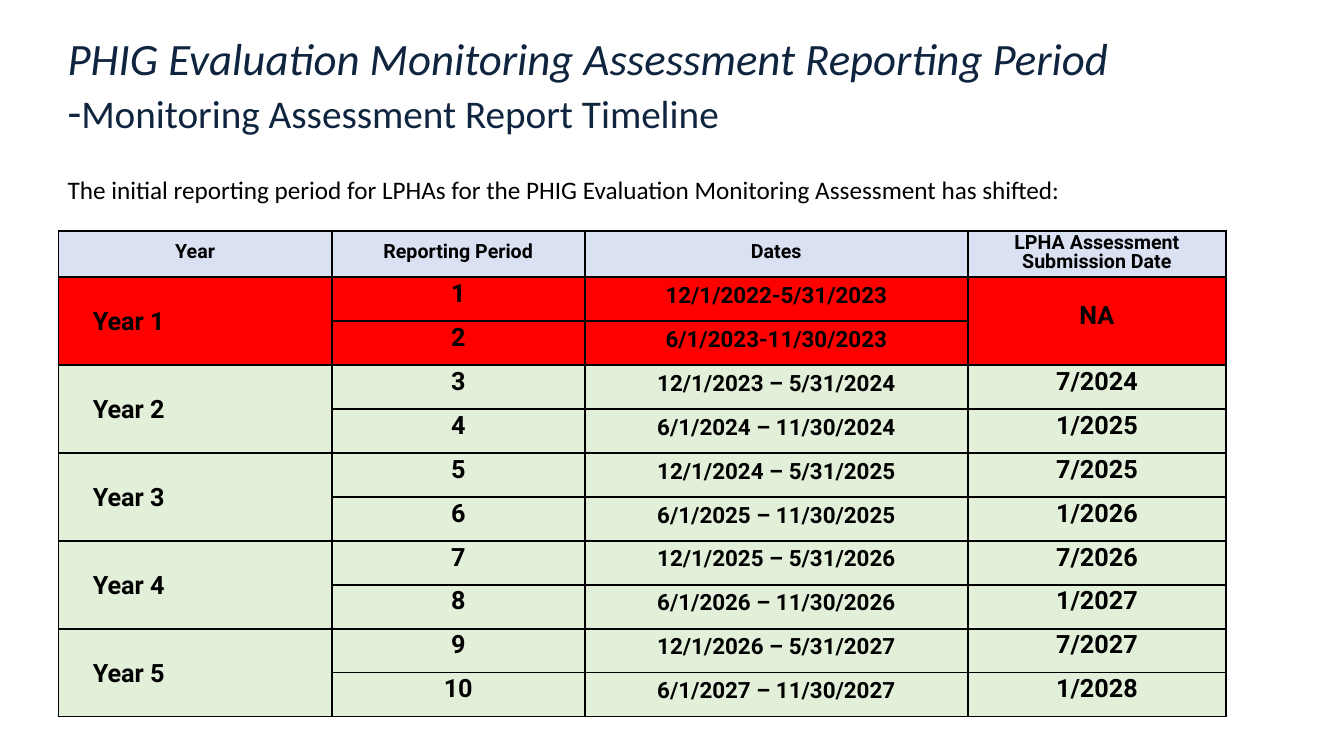
import pptx
import pptx.util
import pptx.dml.color
import pptx.enum.text
import pptx.oxml
import pptx.oxml.ns

Inches = pptx.util.Inches
Pt = pptx.util.Pt
Align = pptx.enum.text.PP_ALIGN
Anchor = pptx.enum.text.MSO_ANCHOR

COLORS = {
    "title": "0F243E",
    "text": "000000",
    "border": "000000",
    "header": "D9E1F3",
    "skipped": "FF0000",
    "active": "E2EFD9",
}
HEADERS = ["Year", "Reporting Period", "Dates", "LPHA Assessment Submission Date"]
PERIODS = [
    ("12/1/2022-5/31/2023", "NA"),
    ("6/1/2023-11/30/2023", ""),
    ("12/1/2023 – 5/31/2024", "7/2024"),
    ("6/1/2024 – 11/30/2024", "1/2025"),
    ("12/1/2024 – 5/31/2025", "7/2025"),
    ("6/1/2025 – 11/30/2025", "1/2026"),
    ("12/1/2025 – 5/31/2026", "7/2026"),
    ("6/1/2026 – 11/30/2026", "1/2027"),
    ("12/1/2026 – 5/31/2027", "7/2027"),
    ("6/1/2027 – 11/30/2027", "1/2028"),
]
COLUMN_WIDTHS = [2.71, 2.51, 3.8, 2.56]
HEADER_INDENTS = [0.39, 0.46, 0.3, 0.3]
BODY_INDENTS = [0.34, 0, 0.3, 0.3]
BODY_SIZES = [18, 18, 16, 18]
TABLE_HEIGHT = 4.82
HEADER_HEIGHT = 0.46


class TimelinePage:
    heading_font = "Calibri"
    table_font = "Roboto"

    def __init__(self, deck):
        self.page = deck.slides.add_slide(deck.slide_layouts[1])

    def style(self, font, name, size, color, bold=False):
        font.name = name
        font.size = Pt(size)
        font.bold = bold
        font.color.rgb = pptx.dml.color.RGBColor.from_string(COLORS[color])

    def place(self, box, left, top, width, height):
        box.left, box.top = Inches(left), Inches(top)
        box.width, box.height = Inches(width), Inches(height)
        frame = box.text_frame
        frame.margin_left = frame.margin_right = 0
        frame.margin_top = frame.margin_bottom = 0
        frame.vertical_anchor = Anchor.TOP
        frame.word_wrap = True
        frame.auto_size = pptx.enum.text.MSO_AUTO_SIZE.SHAPE_TO_FIT_TEXT
        para = frame.paragraphs[0]
        para.alignment = Align.LEFT
        para.space_before = Pt(0)
        return para

    def title(self, heading, dash, subheading):
        para = self.place(self.page.shapes.title, 0.67, 0.3, 12, 1.08)
        self.style(para.font, self.heading_font, 32, "title")
        span = para.add_run()
        span.text = heading
        span.font.italic = True
        para.add_line_break()
        para.add_run().text = dash
        span = para.add_run()
        span.text = subheading
        span.font.size = Pt(28)

    def body(self, text):
        para = self.place(self.page.placeholders[1], 0.67, 1.73, 12, 0.91)
        properties = para._p.get_or_add_pPr()
        properties.set("marL", "0")
        properties.set("indent", "0")
        properties.append(pptx.oxml.parse_xml(
            f'<a:buNone {pptx.oxml.ns.nsdecls("a")}/>'))
        para.text = text
        self.style(para.font, self.heading_font, 18, "text")

    def borders(self, cell):
        properties = cell._tc.get_or_add_tcPr()
        for position, side in enumerate("LRTB"):
            properties.insert(position, pptx.oxml.parse_xml(
                f'<a:ln{side} {pptx.oxml.ns.nsdecls("a")} w="{Pt(1.5)}"><a:solidFill>'
                f'<a:srgbClr val="{COLORS["border"]}"/></a:solidFill></a:ln{side}>'))

    def cell(self, cell, text, size, fill, indent, centered=True):
        cell.margin_left = cell.margin_right = 0
        cell.margin_top = cell.margin_bottom = 0
        cell.vertical_anchor = Anchor.MIDDLE
        cell.fill.solid()
        cell.fill.fore_color.rgb = pptx.dml.color.RGBColor.from_string(COLORS[fill])
        self.borders(cell)
        para = cell.text_frame.paragraphs[0]
        para.text = text
        para.alignment = Align.CENTER if centered else Align.LEFT
        para.line_spacing = Pt(13.6) if centered else 1.07
        properties = para._p.get_or_add_pPr()
        properties.set("marL", str(Inches(indent)))
        if centered:
            properties.set("marR", str(Inches(indent)))
        self.style(para.font, self.table_font, size, "text", bold=True)

    def timeline(self):
        table = self.page.shapes.add_table(
            len(PERIODS) + 1, len(HEADERS), Inches(0.58), Inches(2.29),
            Inches(sum(COLUMN_WIDTHS)), Inches(TABLE_HEIGHT)).table
        table.first_row = table.horz_banding = False
        for column, width in zip(table.columns, COLUMN_WIDTHS):
            column.width = Inches(width)
        for row in table.rows:
            row.height = Inches((TABLE_HEIGHT - HEADER_HEIGHT) / len(PERIODS))
        table.rows[0].height = Inches(HEADER_HEIGHT)

        for column, (text, indent) in enumerate(zip(HEADERS, HEADER_INDENTS)):
            self.cell(table.cell(0, column), text, 14, "header", indent)

        for number, (dates, submission) in enumerate(PERIODS, 1):
            year = f"Year {(number + 1) // 2}" if number % 2 else ""
            fill = "skipped" if number <= 2 else "active"
            values = [year, str(number), dates, submission]
            for column, text in enumerate(values):
                self.cell(table.cell(number, column), text, BODY_SIZES[column],
                          fill, BODY_INDENTS[column], centered=column > 0)

        for first in range(1, len(PERIODS), 2):
            table.cell(first, 0).merge(table.cell(first + 1, 0))
        table.cell(1, 3).merge(table.cell(2, 3))


def main():
    deck = pptx.Presentation()
    deck.slide_width = Inches(13.33)
    deck.slide_height = Inches(7.5)
    page = TimelinePage(deck)
    page.title("PHIG Evaluation Monitoring Assessment Reporting Period", "-",
               "Monitoring Assessment Report Timeline")
    page.body("The initial reporting period for LPHAs for the PHIG Evaluation "
              "Monitoring Assessment has shifted:")
    page.timeline()
    deck.save("out.pptx")


if __name__ == "__main__":
    main()
